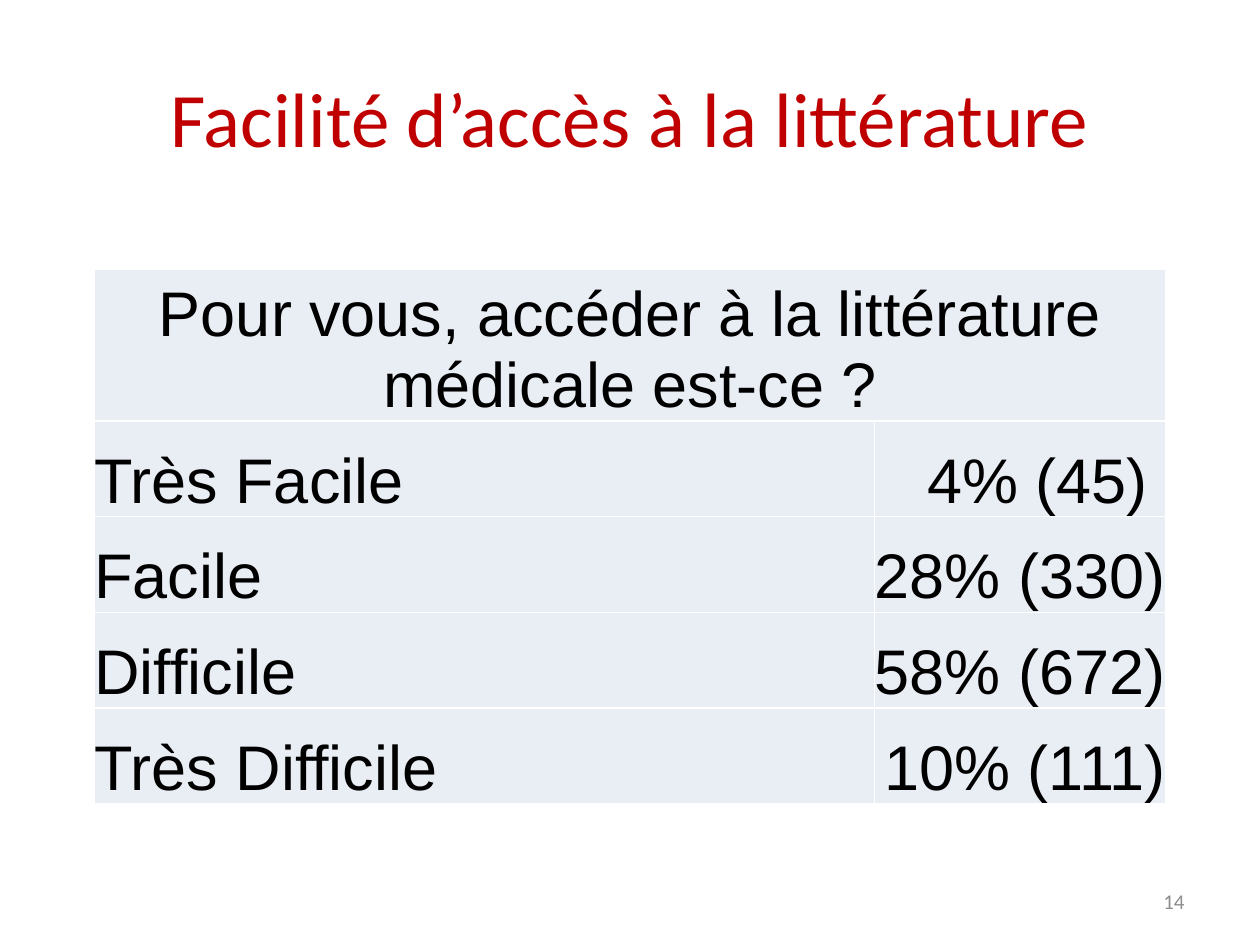
from lxml import etree
from pptx import Presentation
from pptx.dml.color import RGBColor
from pptx.enum.text import MSO_ANCHOR, PP_ALIGN
from pptx.oxml.ns import qn
from pptx.util import Inches, Pt

LEFT, MID, RIGHT = PP_ALIGN.LEFT, PP_ALIGN.CENTER, PP_ALIGN.RIGHT
CENTER, BOTTOM = MSO_ANCHOR.MIDDLE, MSO_ANCHOR.BOTTOM


def tint(code):
    return RGBColor.from_string(code)


def put(frame, text, size, face, color, align):
    para = frame.paragraphs[0]
    para.alignment = align
    run = para.add_run()
    run.text = text
    run.font.size = Pt(size)
    run.font.name = face
    run.font.color.rgb = tint(color)


deck = Presentation()
deck.slide_width, deck.slide_height = Inches(10), Inches(7.5)
slide = deck.slides.add_slide(deck.slide_layouts[6])

labels = [
    (0.5, 0.3, 9, 1.25, "Facilité d’accès à la littérature", 44, "C00000", MID),
    (7.17, 6.95, 2.33, 0.4, "14", 12, "8C8C8C", RIGHT),
]
for left, top, wide, high, text, size, color, align in labels:
    box = slide.shapes.add_textbox(Inches(left), Inches(top), Inches(wide), Inches(high))
    box.text_frame.word_wrap = True
    box.text_frame.vertical_anchor = CENTER
    put(box.text_frame, text, size, "Calibri", color, align)

rows = [
    ("Pour vous, accéder à la littérature médicale est-ce ?", ""),
    ("Très Facile", "4% (45) "),
    ("Facile", "28% (330)"),
    ("Difficile", "58% (672)"),
    ("Très Difficile", "10% (111)"),
]
frame = slide.shapes.add_table(len(rows), 2, Inches(0.75), Inches(2.14), Inches(8.5), Inches(4.22))
table = frame.table
table.first_row = table.horz_banding = False
for col, wide in zip(table.columns, (6.19, 2.31)):
    col.width = Inches(wide)
for row in table.rows:
    row.height = Inches(0.76)
frame.height = Inches(4.22)
table.cell(0, 0).merge(table.cell(0, 1))

for r, row in enumerate(rows):
    for c, text in enumerate(row):
        cell = table.cell(r, c)
        cell.margin_left = cell.margin_right = cell.margin_top = cell.margin_bottom = 0
        cell.vertical_anchor = BOTTOM
        props = cell._tc.get_or_add_tcPr()
        for side in ("a:lnL", "a:lnR", "a:lnT", "a:lnB"):
            line = etree.SubElement(props, qn(side), w=str(Pt(1)))
            paint = etree.SubElement(line, qn("a:solidFill"))
            etree.SubElement(paint, qn("a:srgbClr"), val="FFFFFF")
        cell.fill.solid()
        cell.fill.fore_color.rgb = tint("E9EDF4")
        if text:
            align = MID if r == 0 else (LEFT, RIGHT)[c]
            put(cell.text_frame, text, 36, "Arial", "000000", align)

deck.save("out.pptx")
